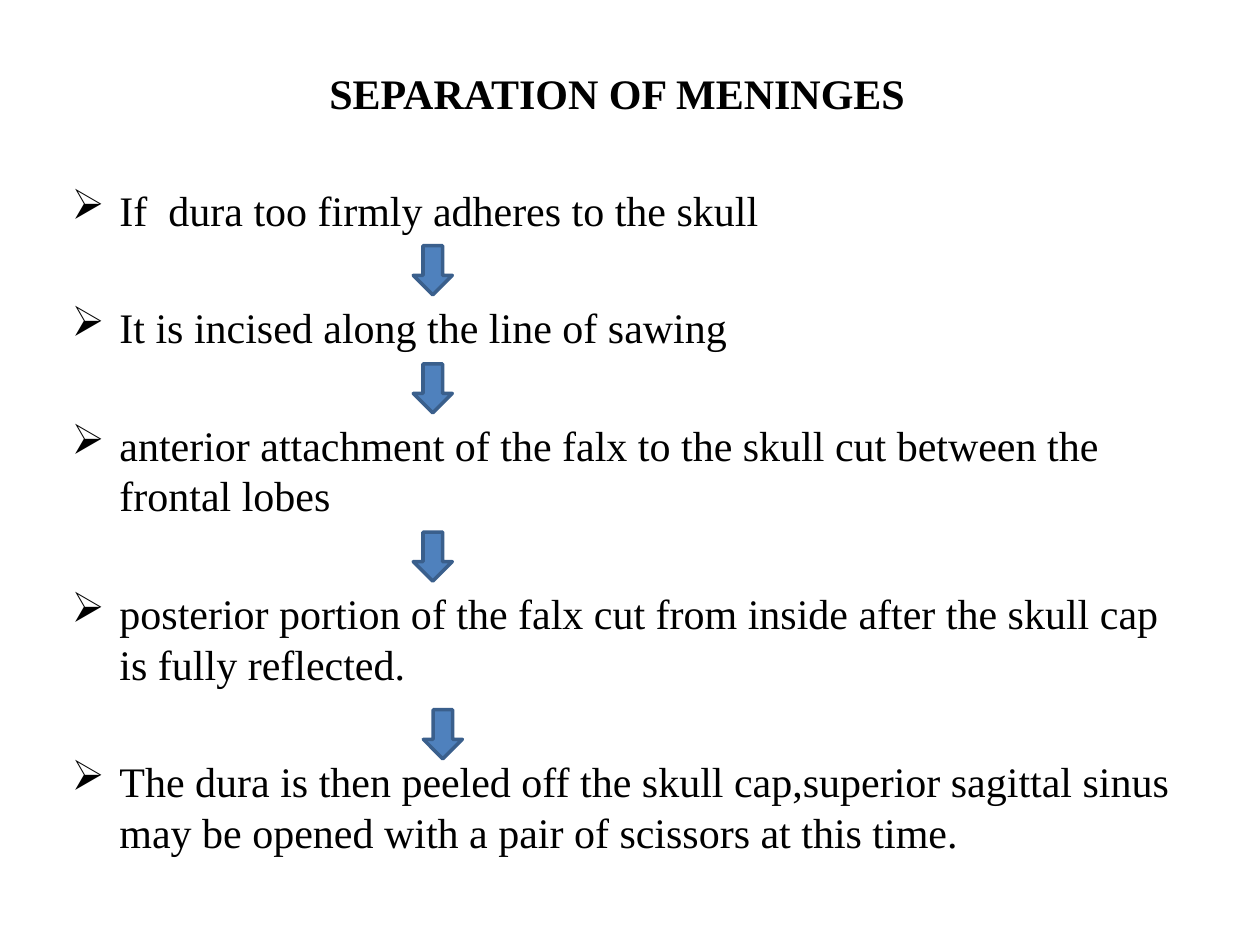
from lxml import etree
from pptx import Presentation
from pptx.dml.color import RGBColor
from pptx.enum.shapes import MSO_SHAPE as Shape
from pptx.enum.text import MSO_ANCHOR as Anchor, PP_ALIGN as Align
from pptx.oxml.ns import qn
from pptx.util import Inches, Pt

WIDTH, HEIGHT = Inches(10), Inches(7.5)
FONT = "Times New Roman"
COLORS = {"text": "000000", "arrow": "4F81BD", "outline": "3A5F8C"}
STEPS = [
    "If  dura too firmly adheres to the skull",
    "It is incised along the line of sawing",
    "anterior attachment of the falx to the skull cut between the frontal lobes",
    "posterior portion of the falx cut from inside after the skull cap is fully reflected.",
    "The dura is then peeled off the skull cap,superior sagittal sinus "
    "may be opened with a pair of scissors at this time.",
]
TITLE_BOX = (0.05, 0.04, 0.888, 0.116)
STEPS_BOX = (0.047, 0.188, 0.9, 0.66)
ARROW_SIZE = (0.031, 0.052)
ARROW_PLACES = [(0.328, 0.26), (0.328, 0.385), (0.328, 0.563), (0.336, 0.751)]


def to_lengths(box):
    left, top, width, height = box
    return (int(left * WIDTH), int(top * HEIGHT),
            int(width * WIDTH), int(height * HEIGHT))


def color(name):
    return RGBColor.from_string(COLORS[name])


def write(paragraph, text, size=24, bold=False, align=Align.LEFT,
          before=0, line=None, bullet=None, indent=0.38):
    paragraph.alignment = align
    paragraph.space_before = Pt(before)
    if line:
        paragraph.line_spacing = Pt(line)
    run = paragraph.add_run()
    run.text = text
    run.font.name = FONT
    run.font.size = Pt(size)
    run.font.bold = bold
    run.font.color.rgb = color("text")
    if bullet:
        properties = paragraph._p.get_or_add_pPr()
        properties.set("marL", str(Inches(indent)))
        properties.set("indent", str(-Inches(indent)))
        etree.SubElement(properties, qn("a:buChar")).set("char", bullet)


def add_title(slide, box):
    title = slide.shapes.title
    title.left, title.top, title.width, title.height = to_lengths(box)
    title.text_frame.vertical_anchor = Anchor.MIDDLE
    write(title.text_frame.paragraphs[0], "SEPARATION OF MENINGES ",
          bold=True, align=Align.CENTER)


def add_steps(slide, box):
    frame = slide.shapes.add_textbox(*to_lengths(box)).text_frame
    frame.word_wrap = True
    frame.vertical_anchor = Anchor.TOP
    for index, step in enumerate(STEPS):
        paragraph = frame.add_paragraph() if index else frame.paragraphs[0]
        write(paragraph, step, before=38.3 if index else 0, line=28.9, bullet="➢")


def add_arrow(slide, box):
    arrow = slide.shapes.add_shape(Shape.DOWN_ARROW, *to_lengths(box))
    arrow.shadow.inherit = False
    arrow.fill.solid()
    arrow.fill.fore_color.rgb = color("arrow")
    arrow.line.color.rgb = color("outline")
    arrow.line.width = Pt(2)


def main():
    presentation = Presentation()
    presentation.slide_width, presentation.slide_height = WIDTH, HEIGHT
    slide = presentation.slides.add_slide(presentation.slide_layouts[5])
    add_title(slide, TITLE_BOX)
    add_steps(slide, STEPS_BOX)
    for place in ARROW_PLACES:
        add_arrow(slide, place + ARROW_SIZE)
    presentation.save("out.pptx")


if __name__ == "__main__":
    main()
